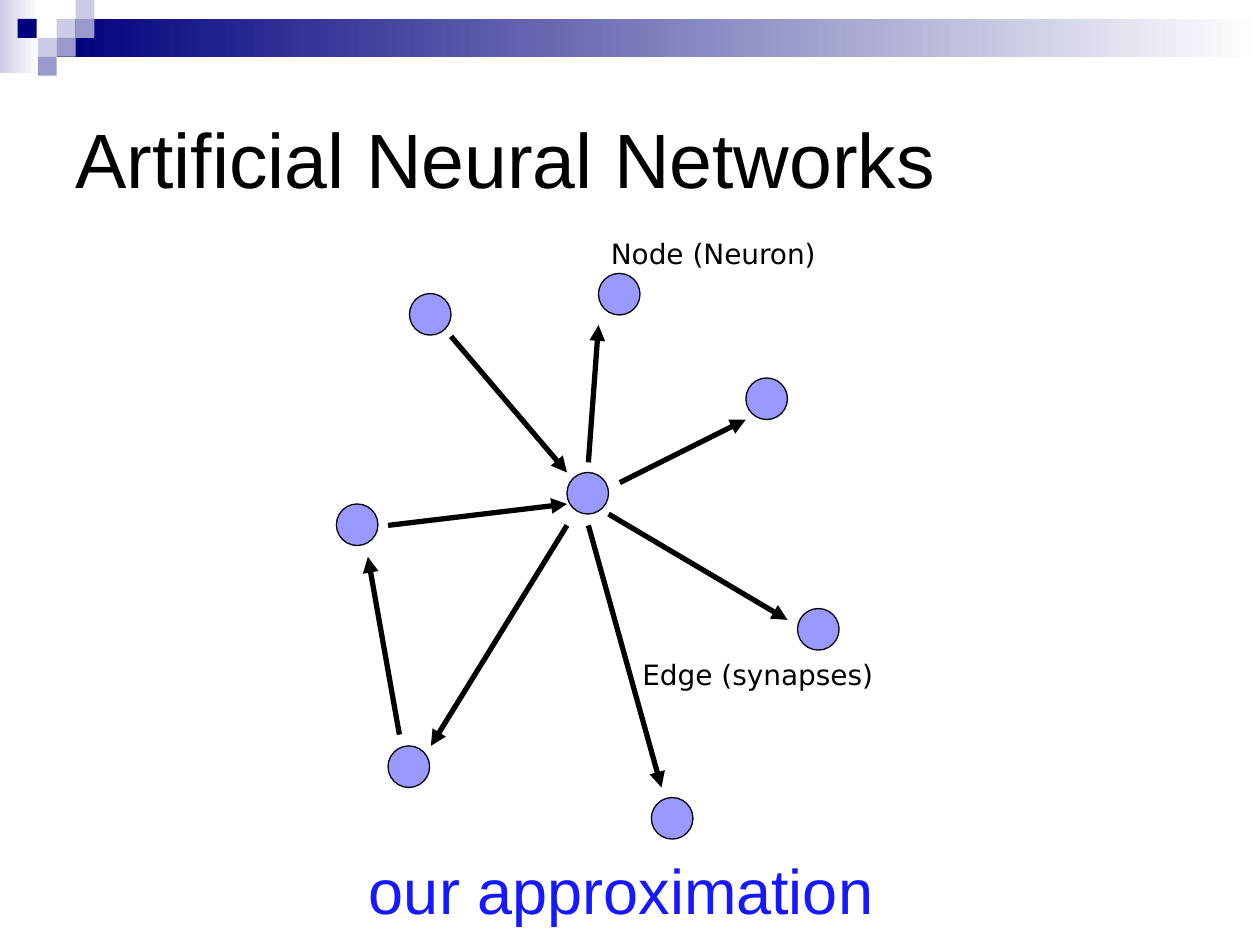
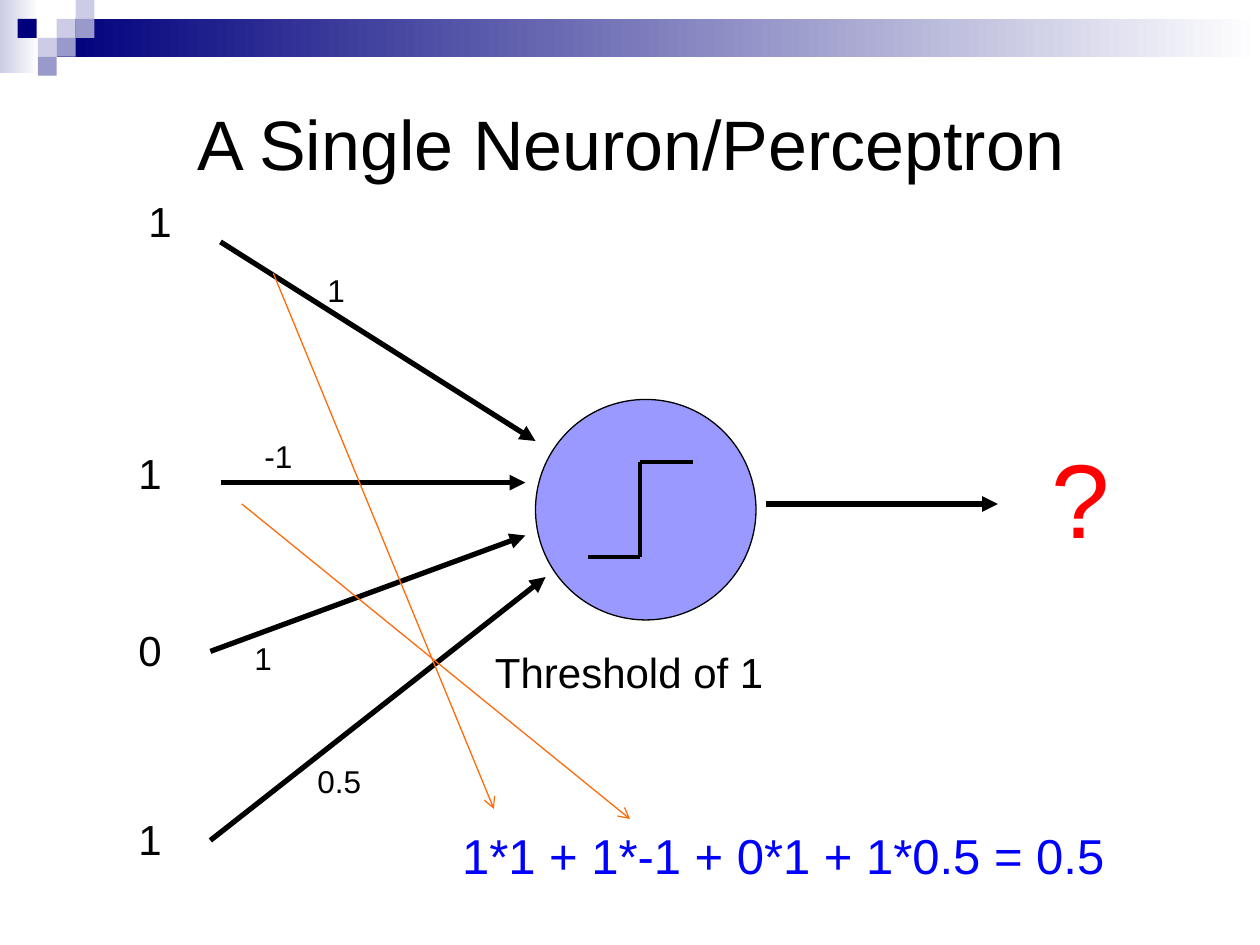
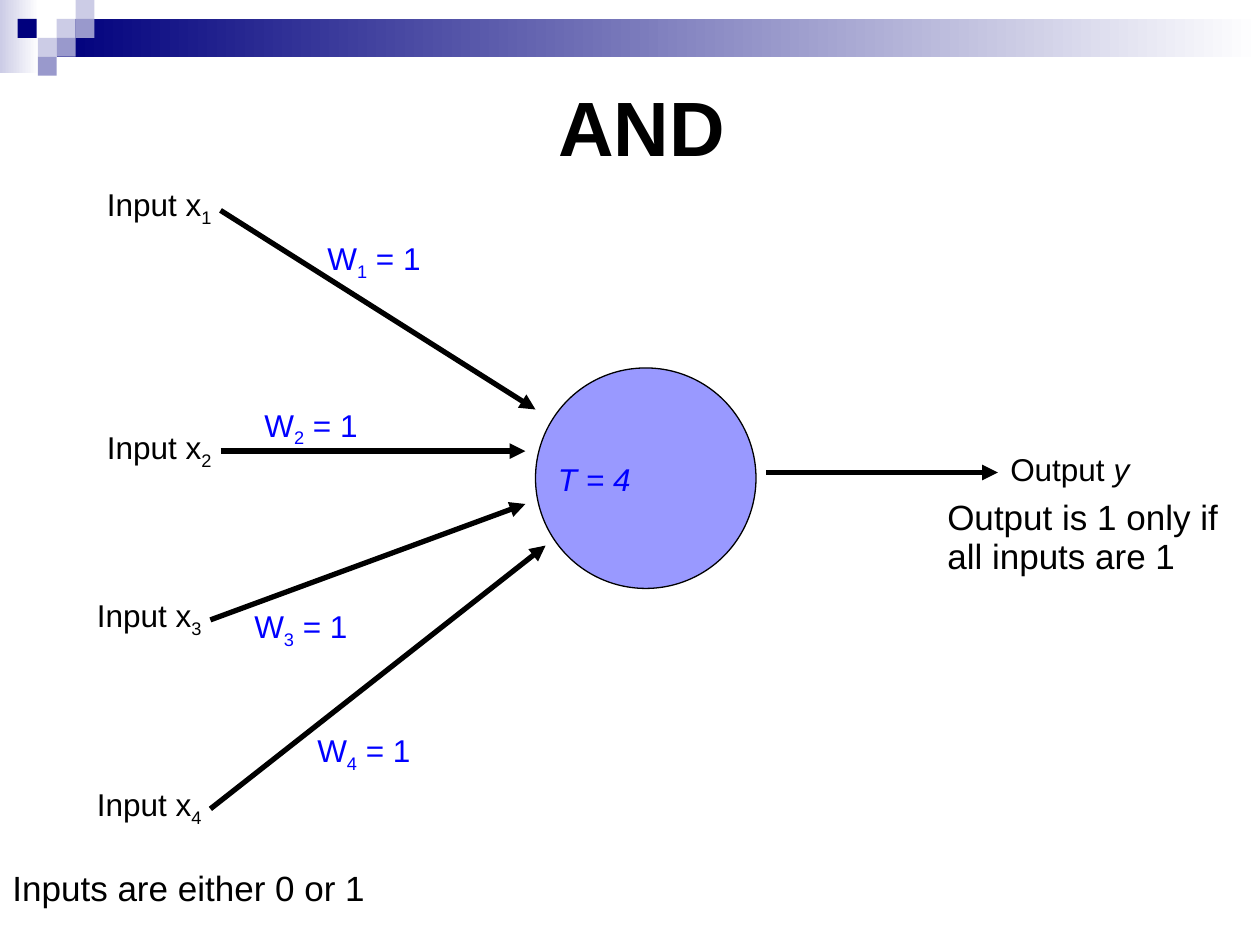
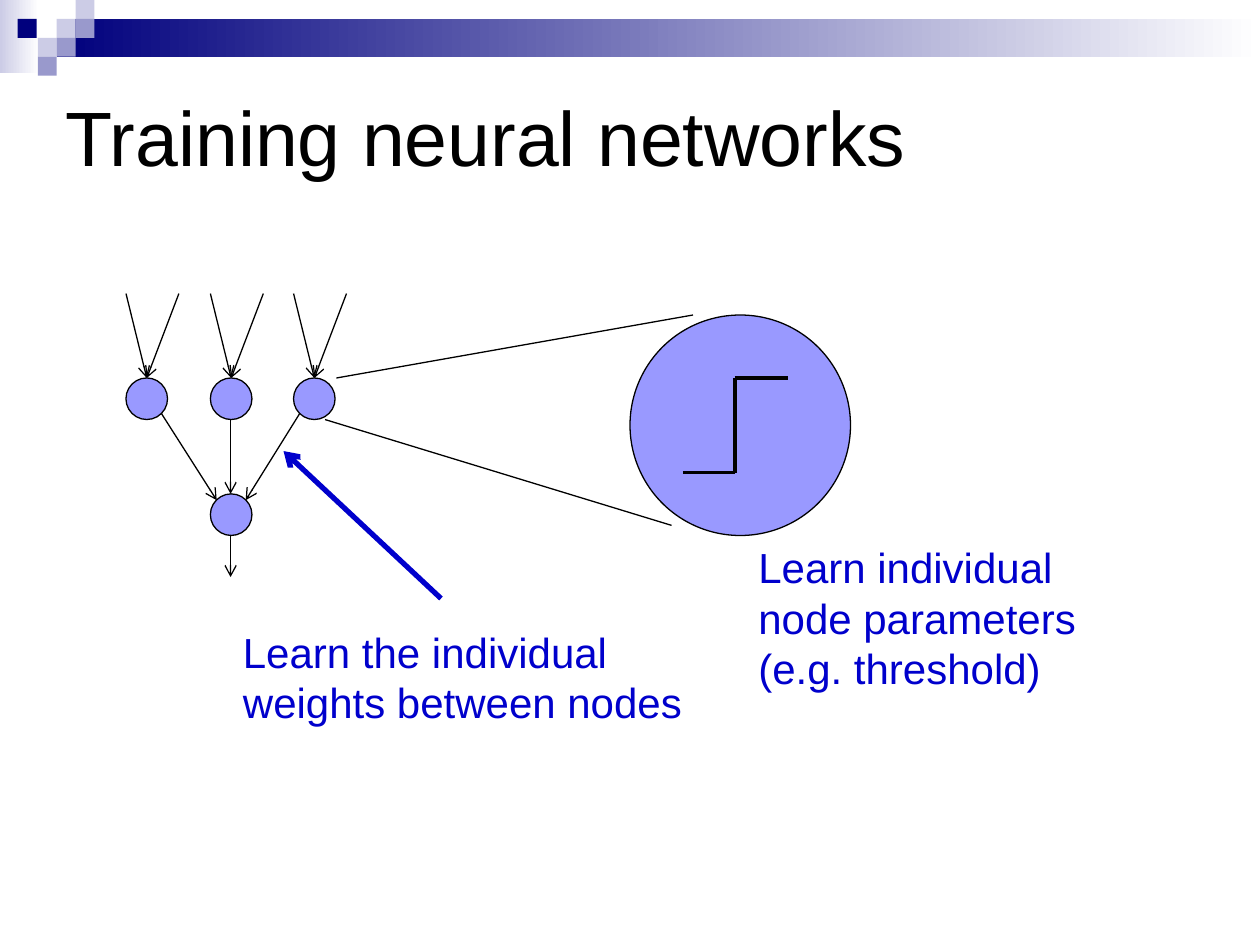
from lxml import etree
from pptx import Presentation
from pptx.dml.color import RGBColor
from pptx.enum.shapes import MSO_CONNECTOR, MSO_SHAPE
from pptx.enum.text import MSO_ANCHOR, MSO_AUTO_SIZE, PP_ALIGN
from pptx.oxml.ns import qn
from pptx.util import Cm, Pt

STRAIGHT = MSO_CONNECTOR.STRAIGHT
OVAL, RECTANGLE = MSO_SHAPE.OVAL, MSO_SHAPE.RECTANGLE
LEFT, CENTER = PP_ALIGN.LEFT, PP_ALIGN.CENTER
MIDDLE = MSO_ANCHOR.MIDDLE
NO_FIT, GROW = MSO_AUTO_SIZE.NONE, MSO_AUTO_SIZE.SHAPE_TO_FIT_TEXT

# Shared look
BLACK, WHITE, NAVY = "000000", "FFFFFF", "00007D"
PALE, LILAC, NODE_FILL = "CCCCE6", "9999CC", "9999FF"
BLUE, DEEP_BLUE, BRIGHT_BLUE = "0000FF", "0000CC", "1818FF"
ORANGE, RED = "FF6B09", "FF0000"
FONT, LABEL_FONT = "Arial", "DejaVu Sans"
TITLE_ONLY = 5
NODE_SIZE, NEURON_SIZE, TILE = 0.33, 1.75, 0.15


def color(hex_string):
    return RGBColor.from_string(hex_string)


def inches(*values):
    """Turn lengths in inches into Cm lengths."""
    return [Cm(2.54 * value) for value in values]


def format_paragraph(paragraph, size, font_color=BLACK, font=FONT,
                     align=LEFT, bold=False):
    paragraph.alignment = align
    paragraph.font.name = font
    paragraph.font.size = Pt(size)
    paragraph.font.bold = bold
    paragraph.font.color.rgb = color(font_color)


def add_slide(presentation):
    layout = presentation.slide_layouts[TITLE_ONLY]
    return presentation.slides.add_slide(layout)


def set_title(slide, text, box, size=44, align=LEFT, bold=False):
    title = slide.shapes.title
    title.left, title.top, title.width, title.height = inches(*box)
    frame = title.text_frame
    frame.text = text
    frame.auto_size = NO_FIT
    frame.vertical_anchor = MIDDLE
    format_paragraph(frame.paragraphs[0], size, align=align, bold=bold)


def add_text(slide, lines, box, size, font_color=BLACK, font=FONT, wrap=True):
    """Each line is a string or a list of (text, style) runs."""
    frame = slide.shapes.add_textbox(*inches(*box)).text_frame
    frame.word_wrap = wrap
    frame.auto_size = GROW
    for index, line in enumerate(lines):
        paragraph = frame.add_paragraph() if index else frame.paragraphs[0]
        runs = [(line, "")] if isinstance(line, str) else line
        for text, style in runs:
            run = paragraph.add_run()
            run.text = text
            if style == "italic":
                run.font.italic = True
            elif style == "subscript":
                run._r.get_or_add_rPr().set("baseline", "-25000")
        format_paragraph(paragraph, size, font_color, font)
    return frame


def add_line(slide, start, end, width=0.75, line_color=BLACK, head=None):
    line = slide.shapes.add_connector(STRAIGHT, *inches(*start, *end))
    line.line.width = Pt(width)
    line.line.color.rgb = color(line_color)
    properties = line.element.spPr
    if head:
        outline = properties.find(qn("a:ln"))
        etree.SubElement(outline, qn("a:tailEnd"), type=head)
    etree.SubElement(properties, qn("a:effectLst"))
    return line


def add_thick_arrow(slide, start, end):
    return add_line(slide, start, end, 3, head="triangle")


def add_circle(slide, left, top, size=NODE_SIZE):
    circle = slide.shapes.add_shape(OVAL, *inches(left, top, size, size))
    circle.shadow.inherit = False
    circle.fill.solid()
    circle.fill.fore_color.rgb = color(NODE_FILL)
    circle.line.color.rgb = color(BLACK)
    circle.line.width = Pt(0.75)
    return circle


def add_step(slide, left, top):
    """Step function inside the neuron whose corner is given."""
    points = [(left + x, top + y) for x, y in
              [(0.42, 1.25), (0.83, 1.25), (0.83, 0.5), (1.25, 0.5)]]
    for start, end in zip(points, points[1:]):
        add_line(slide, start, end, 2.25)


def add_perceptron(slide, top, weights, weight_color=BLACK):
    """Neuron with four weighted inputs and one output."""
    add_circle(slide, 4.25, top, NEURON_SIZE)
    add_thick_arrow(slide, (6.08, top + 0.83), (7.92, top + 0.83))
    inputs = [
        ((1.75, -1.25), (4.25, 0.33), (2.5, -1.07)),
        ((1.75, 0.66), (4.17, 0.66), (2, 0.25)),
        ((1.67, 2), (4.17, 1.08), (1.92, 1.85)),
        ((1.67, 3.5), (4.33, 1.41), (2.42, 2.83)),
    ]
    for weight, (start, end, label) in zip(weights, inputs):
        add_thick_arrow(slide, (start[0], top + start[1]),
                        (end[0], top + end[1]))
        add_text(slide, [weight], (label[0], top + label[1], 1.5, 0.4),
                 18, weight_color)


def add_master_band(presentation, slide):
    """Draw the header band and move it to the back of the master."""
    parts = [
        ((0, 0, 0.31, 0.58), (PALE, WHITE)),
        ((0.45, 0.15, 9.55, 0.3), (NAVY, WHITE)),
    ]
    tiles = [(0.45, 0.15, PALE), (0.6, 0, PALE), (0.6, 0.15, LILAC),
             (0.3, 0.3, PALE), (0.14, 0.15, NAVY), (0.45, 0.3, LILAC),
             (0.3, 0.45, LILAC)]
    parts += [((x, y, TILE, TILE), (fill,)) for x, y, fill in tiles]
    master_tree = presentation.slide_master.shapes.element
    for index, (box, colors) in enumerate(parts):
        part = slide.shapes.add_shape(RECTANGLE, *inches(*box))
        part.shadow.inherit = False
        part.line.fill.background()
        if len(colors) == 2:
            part.fill.gradient()
            part.fill.gradient_angle = 0
            for stop, stop_color in zip(part.fill.gradient_stops, colors):
                stop.color.rgb = color(stop_color)
        else:
            part.fill.solid()
            part.fill.fore_color.rgb = color(colors[0])
        part.name = f"Band {index + 1}"
        part.element.xpath(".//p:cNvPr")[0].set("id", str(100 + index))
        master_tree.insert(2 + index, part.element)


def build_network(slide):
    set_title(slide, "Artificial Neural Networks", (0.5, 0.5, 9, 1.5))
    for left, top in [(4.75, 2.17), (3.25, 2.33), (6.33, 4.83), (5.92, 3),
                      (4.5, 3.75), (5.17, 6.33), (2.67, 4), (3.08, 5.92)]:
        add_circle(slide, left, top)
    edges = [
        ((3.58, 2.67), (4.5, 3.75)), ((3.08, 4.17), (4.5, 4)),
        ((4.67, 3.67), (4.75, 2.58)), ((4.92, 3.83), (5.92, 3.33)),
        ((4.83, 4.08), (6.25, 4.92)), ((4.67, 4.17), (5.25, 6.25)),
        ((4.5, 4.17), (3.42, 5.92)), ((3.17, 5.83), (2.92, 4.42)),
    ]
    for start, end in edges:
        add_thick_arrow(slide, start, end)
    add_text(slide, ["Node (Neuron)"], (4.75, 1.83, 2.17, 0.37), 16,
             font=LABEL_FONT)
    add_text(slide, ["Edge (synapses)"], (5, 5.17, 2.67, 0.37), 16,
             font=LABEL_FONT)
    add_text(slide, ["our approximation"], (2.83, 6.71, 4.92, 0.71), 36,
             BRIGHT_BLUE)


def build_single_neuron(slide):
    set_title(slide, "A Single Neuron/Perceptron", (0.42, 0.75, 9.17, 0.77),
              40, CENTER)
    add_perceptron(slide, 3.17, ["1", "-1", "1", "0.5"])
    add_step(slide, 4.25, 3.17)
    add_text(slide, ["Threshold of 1"], (3.83, 5.08, 2.75, 0.5), 24)
    for value, left, top in [("1", 1.08, 1.5), ("1", 1, 3.5),
                             ("0", 1, 4.91), ("1", 1, 6.41)]:
        add_text(slide, [value], (left, top, 0.67, 0.5), 24)
    # Weighted sum
    add_text(slide, ["1*1 + 1*-1 + 0*1 + 1*0.5 = 0.5"],
             (3.57, 6.5, 5.46, 0.57), 28, BLUE, wrap=False)
    for start, end in [((2.17, 2.17), (3.92, 6.42)), ((1.92, 4), (5, 6.5))]:
        add_line(slide, start, end, line_color=ORANGE, head="arrow")
    add_text(slide, ["?"], (8.25, 3.39, 1.5, 1.11), 60, RED)


def build_and_gate(slide):
    set_title(slide, "AND", (4.33, 0.58, 3.75, 0.83), bold=True)
    weights = [[("W", ""), (str(number), "subscript"), (" = 1", "")]
               for number in range(1, 5)]
    add_perceptron(slide, 2.92, weights, BLUE)
    add_text(slide, [[("T = 4", "italic")]], (4.33, 3.6, 1.75, 0.4), 18, BLUE)
    add_text(slide, [[("Output ", ""), ("y", "italic")]],
             (7.92, 3.52, 1.5, 0.4), 18)
    positions = [(0.75, 1.42), (0.75, 3.35), (0.67, 4.68), (0.67, 6.18)]
    for number, (left, top) in enumerate(positions, 1):
        add_text(slide, [[("Input x", ""), (str(number), "subscript")]],
                 (left, top, 1.25, 0.4), 18)
    add_text(slide, ["Inputs are either 0 or 1"], (0, 6.83, 3.58, 0.43), 20)
    rule = add_text(slide, ["Output is 1 only if", "all inputs are 1"],
                    (7.42, 4.03, 4, 0.6), 20)
    for paragraph in rule.paragraphs:
        paragraph.line_spacing = 0.5
        paragraph.space_before = Pt(10)


def build_training(slide):
    set_title(slide, "Training neural networks", (0.42, 0.33, 9, 1.5))
    # Small network: two inputs for each node of the first layer
    for left in (1, 1.67, 2.33):
        node = add_circle(slide, left, 3)
        for start in (left, left + 0.42):
            arrow = add_line(slide, (start, 2.33), (left + 0.17, 3),
                             head="arrow")
            arrow.end_connect(node, 0)
    add_circle(slide, 1.67, 3.92)
    for start, end in [((1.28, 3.28), (1.72, 3.97)),
                       ((1.83, 3.33), (1.83, 3.92)),
                       ((2.38, 3.28), (1.95, 3.97)),
                       ((1.83, 4.25), (1.83, 4.58))]:
        add_line(slide, start, end, head="arrow")
    # Enlarged node
    add_circle(slide, 5, 2.5, NEURON_SIZE)
    add_step(slide, 5, 2.5)
    add_line(slide, (2.67, 3), (5.5, 2.5))
    add_line(slide, (2.58, 3.33), (5.33, 4.17))
    # What is learned
    add_line(slide, (3.5, 4.75), (2.25, 3.58), 3, DEEP_BLUE, "arrow")
    add_text(slide, ["Learn the individual weights between nodes"],
             (1.83, 4.92, 4, 0.91), 24, DEEP_BLUE)
    add_text(slide, ["Learn individual node parameters (e.g. threshold)"],
             (5.92, 4.25, 3.08, 1.31), 24, DEEP_BLUE)


def main():
    presentation = Presentation()
    presentation.slide_width, presentation.slide_height = inches(10, 7.5)
    builders = [build_network, build_single_neuron, build_and_gate,
                build_training]
    slides = [add_slide(presentation) for _ in builders]
    add_master_band(presentation, slides[0])
    for build, slide in zip(builders, slides):
        build(slide)
    presentation.save("out.pptx")


if __name__ == "__main__":
    main()
